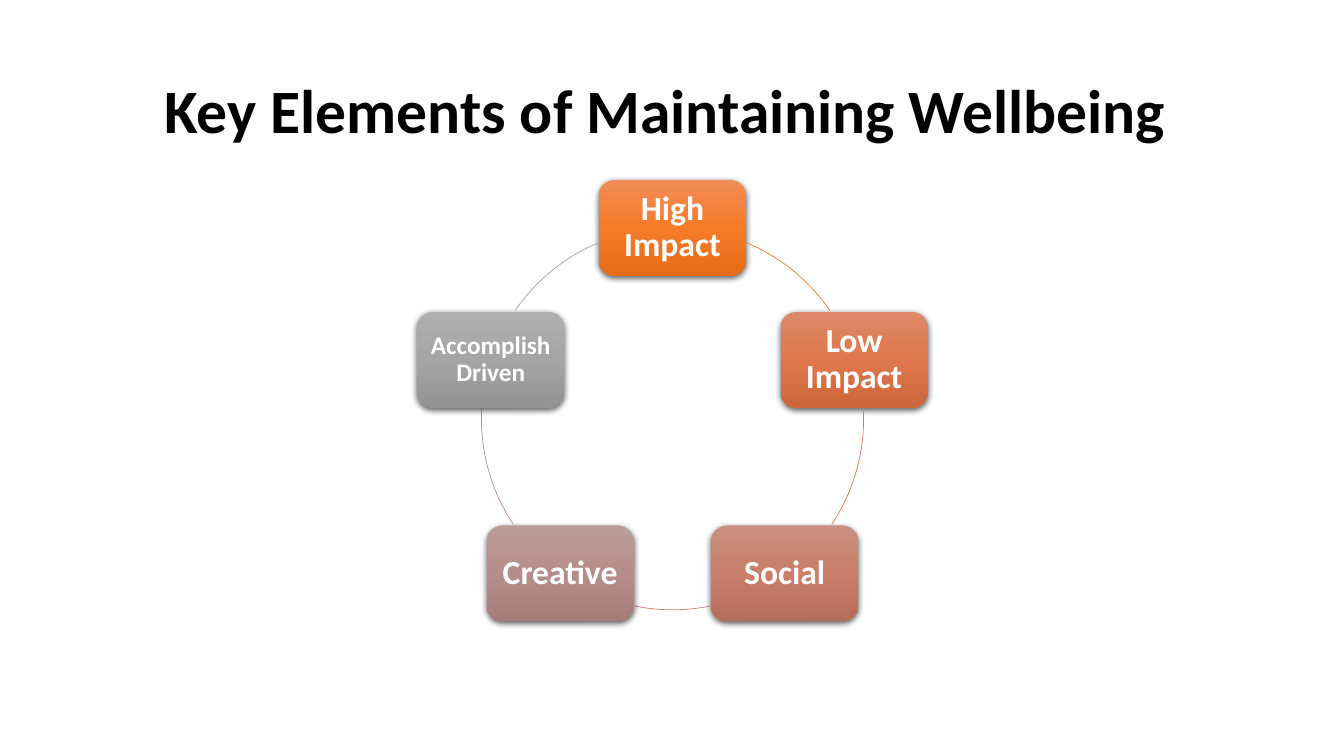
import copy
import math

from lxml import etree
from pptx import Presentation
from pptx import util as u
from pptx.dml.color import RGBColor
from pptx.enum import shapes, text
from pptx.oxml import ns

TITLE = "Key Elements of Maintaining Wellbeing "
FONT = "Calibri"
BLACK = RGBColor(0, 0, 0)
WHITE = RGBColor(255, 255, 255)

# Clockwise from the top: label, size, inset, gradient colours from top to bottom
ELEMENTS = [
    ("High Impact", 24, 0.1, ("F18C57", "F67B28", "E56C19")),
    ("Low Impact", 24, 0.1, ("DD8A6A", "DE774B", "CD673B")),
    ("Social", 24, 0.1, ("CB8F81", "C97E6B", "B76D5B")),
    ("Creative", 24, 0.1, ("BC9C99", "B68E89", "A47C78")),
    ("Accomplish Driven", 18, 0.07, ("AFAFAF", "A5A5A5", "939393")),
]
# Start and end in degrees clockwise from the top, line colour
ARCS = [
    (23, 55.4, RGBColor.from_string("ED7D31")),
    (86.8, 123.5, RGBColor.from_string("D87A51")),
    (168.7, 191.3, RGBColor.from_string("C48170")),
    (236.5, 273.2, RGBColor.from_string("B4908B")),
    (304.6, 337, RGBColor.from_string("A5A5A5")),
]
CENTER_X, CENTER_Y, RADIUS = 6.67, 4.155, 1.895
CARD_WIDTH, CARD_HEIGHT = 1.46, 0.95


def write(shape, words, size, color, inset=0.1):
    frame = shape.text_frame
    frame.word_wrap = True
    frame.auto_size = text.MSO_AUTO_SIZE.NONE
    frame.vertical_anchor = text.MSO_ANCHOR.MIDDLE
    frame.margin_left = frame.margin_right = u.Inches(inset)
    frame.margin_top = frame.margin_bottom = u.Inches(min(inset, 0.1))
    para = frame.paragraphs[0]
    para.alignment = text.PP_ALIGN.CENTER
    para.line_spacing = 0.9
    span = para.add_run()
    span.text = words
    span.font.name, span.font.size = FONT, u.Pt(size)
    span.font.bold = True
    span.font.color.rgb = color


def shade(shape, colors):
    """Fill with evenly spaced gradient stops running downwards."""
    shape.fill.gradient()
    shape.fill.gradient_angle = 270
    stop_list = shape._element.spPr.find(".//" + ns.qn("a:gsLst"))
    stop_list.append(copy.deepcopy(stop_list[0]))
    for index, (stop, color) in enumerate(zip(shape.fill.gradient_stops, colors)):
        stop.position = index / (len(colors) - 1)
        stop.color.rgb = RGBColor.from_string(color)


def drop_shadow(shape):
    shape.shadow.inherit = False
    effects = shape._element.spPr.find(ns.qn("a:effectLst"))
    shadow = etree.SubElement(
        effects, ns.qn("a:outerShdw"), blurRad=str(u.Pt(4.5)),
        dist=str(u.Pt(1.5)), dir="5400000", algn="ctr", rotWithShape="0")
    color = etree.SubElement(shadow, ns.qn("a:srgbClr"), val="000000")
    etree.SubElement(color, ns.qn("a:alpha"), val="63000")


def add_centered(page, kind, x, y, width, height):
    return page.shapes.add_shape(
        kind, u.Inches(x - width / 2), u.Inches(y - height / 2),
        u.Inches(width), u.Inches(height))


def add_card(page, index, label, size, inset, colors):
    angle = math.radians(index * 360 / len(ELEMENTS))
    card = add_centered(
        page, shapes.MSO_SHAPE.ROUNDED_RECTANGLE,
        CENTER_X + RADIUS * math.sin(angle),
        CENTER_Y - RADIUS * math.cos(angle), CARD_WIDTH, CARD_HEIGHT)
    shade(card, colors)
    card.line.fill.background()
    drop_shadow(card)
    write(card, label, size, WHITE, inset)


def add_arc(page, start, end, color):
    arc = add_centered(page, shapes.MSO_SHAPE.ARC, CENTER_X, CENTER_Y,
                       2 * RADIUS, 2 * RADIUS)
    # Arc angles count from the right, in units of 1/0.6 degree
    for index, angle in enumerate((start, end)):
        arc.adjustments[index] = (angle - 90) % 360 * 0.6
    arc.fill.background()
    arc.line.color.rgb = color
    arc.line.width = u.Pt(0.5)
    arc.shadow.inherit = False


def main():
    deck = Presentation()
    deck.slide_width, deck.slide_height = u.Inches(13.33), u.Inches(7.5)
    page = deck.slides.add_slide(deck.slide_layouts.get_by_name("Title Only"))
    title = page.shapes.title
    title.left, title.top = u.Inches(0.92), u.Inches(0.4)
    title.width, title.height = u.Inches(11.5), u.Inches(1.45)
    write(title, TITLE, 44, BLACK)
    for index, (element, arc) in enumerate(zip(ELEMENTS, ARCS)):
        add_card(page, index, *element)
        add_arc(page, *arc)
    deck.save("out.pptx")


if __name__ == "__main__":
    main()
